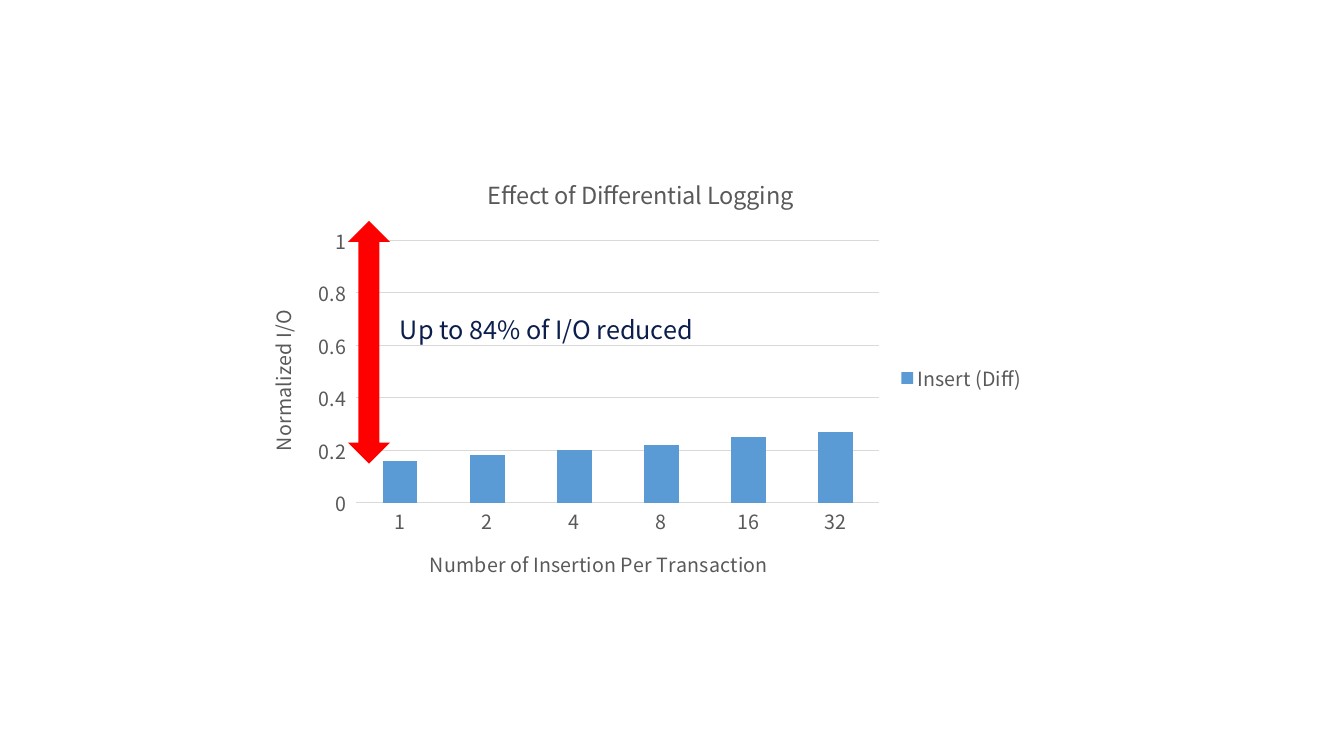
from pptx import Presentation
from pptx.chart.data import CategoryChartData as Data
from pptx.dml.color import RGBColor as RGB
from pptx.enum.chart import XL_CHART_TYPE as Kind
from pptx.enum.chart import XL_LEGEND_POSITION as Spot
from pptx.enum.chart import XL_TICK_MARK as Tick
from pptx.enum.shapes import MSO_SHAPE as Shape
from pptx.enum.text import MSO_ANCHOR as Anchor
from pptx.util import Pt

FONT = "Noto Sans CJK KR"
HUES = {
    "bar": "5B9BD5",
    "grid": "D9D9D9",
    "label": "595959",
    "arrow": "FF0000",
    "note": "0B1E4E",
}
LOADS = ["1", "2", "4", "8", "16", "32"]
RATIOS = [0.16, 0.18, 0.2, 0.22, 0.25, 0.27]


def hue(name):
    return RGB.from_string(HUES[name])


def style(font, size, color):
    font.name, font.size, font.bold = FONT, Pt(size), False
    font.color.rgb = hue(color)


def add_run(frame, text, size, color):
    run = frame.paragraphs[0].add_run()
    run.text = text
    style(run.font, size, color)


def rule(line):
    line.color.rgb = hue("grid")
    line.width = Pt(0.75)


def set_axis(axis, title, tick):
    add_run(axis.axis_title.text_frame, title, 14, "label")
    style(axis.tick_labels.font, 14, "label")
    axis.major_tick_mark = tick
    axis.minor_tick_mark = Tick.NONE


def add_chart(slide):
    data = Data(number_format="General")
    data.categories = LOADS
    data.add_series("Insert (Diff)", RATIOS)
    chart = slide.shapes.add_chart(
        Kind.COLUMN_CLUSTERED, Pt(175), Pt(111), Pt(565), Pt(318), data
    ).chart
    style(chart.font, 14, "label")
    add_run(chart.chart_title.text_frame,
            "Effect of Differential Logging", 16.8, "label")
    chart.chart_title.include_in_layout = False

    chart.has_legend = True
    chart.legend.position = Spot.RIGHT
    chart.legend.include_in_layout = False
    style(chart.legend.font, 14, "label")

    loads, ratios = chart.category_axis, chart.value_axis
    set_axis(loads, "Number of Insertion Per Transaction", Tick.NONE)
    rule(loads.format.line)
    set_axis(ratios, "Normalized I/O", Tick.OUTSIDE)
    ratios.format.line.fill.background()
    ratios.minimum_scale, ratios.maximum_scale = 0, 1
    ratios.major_unit = 0.2
    rule(ratios.major_gridlines.format.line)

    plot = chart.plots[0]
    plot.gap_width = 150
    plot.vary_by_categories = False
    fill = plot.series[0].format.fill
    fill.solid()
    fill.fore_color.rgb = hue("bar")


def add_note(group, text):
    box = group.shapes.add_textbox(Pt(278.6), Pt(222), Pt(242), Pt(26))
    frame = box.text_frame
    frame.word_wrap = True
    frame.margin_top = frame.margin_bottom = 0
    frame.vertical_anchor = Anchor.MIDDLE
    add_run(frame, text, 18, "note")


def add_arrow(group):
    arrow = group.shapes.add_shape(
        Shape.UP_DOWN_ARROW, Pt(248.6), Pt(157.8), Pt(30), Pt(173.4)
    )
    arrow.shadow.inherit = False
    arrow.fill.solid()
    arrow.fill.fore_color.rgb = hue("arrow")
    arrow.line.fill.background()


def main():
    deck = Presentation()
    deck.slide_width, deck.slide_height = Pt(960), Pt(540)
    slide = deck.slides.add_slide(deck.slide_layouts[6])
    add_chart(slide)
    group = slide.shapes.add_group_shape()
    add_note(group, "Up to 84% of I/O reduced")
    add_arrow(group)
    deck.save("out.pptx")


if __name__ == "__main__":
    main()
